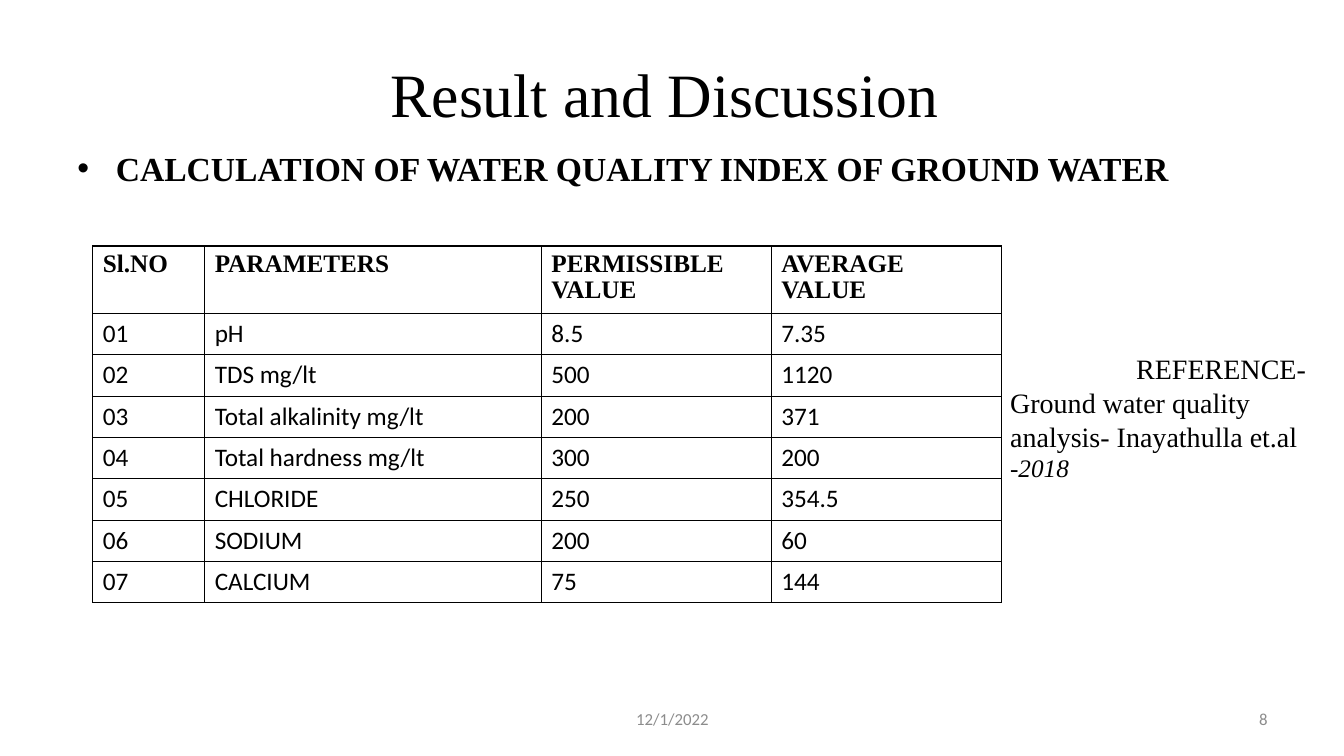
from lxml import etree
from pptx import Presentation
from pptx import util as u
from pptx.dml.color import RGBColor
from pptx.enum import text
from pptx.oxml import ns

HUES = {"ink": "000000", "gray": "8C8C8C"}
SERIF, SANS = "Times New Roman", "Calibri"
COLS = [1.11, 3.34, 2.28, 2.28]
HEAD = ["Sl.NO", "PARAMETERS", "PERMISSIBLE VALUE", "AVERAGE VALUE"]
DATA = [
    ("pH", "8.5", "7.35"),
    ("TDS mg/lt", "500", "1120"),
    ("Total alkalinity mg/lt", "200", "371"),
    ("Total hardness mg/lt", "300", "200"),
    ("CHLORIDE", "250", "354.5"),
    ("SODIUM", "200", "60"),
    ("CALCIUM", "75", "144"),
]


def add_run(para, words, size, face=SERIF, hue="ink", bold=False, slant=False):
    run = para.add_run()
    run.text = words
    font = run.font
    font.size, font.name = u.Pt(size), face
    font.bold, font.italic = bold, slant
    font.color.rgb = RGBColor.from_string(HUES[hue])


def add_box(slide, left, top, width, height, align="LEFT", anchor="TOP"):
    """Add a wrapped text box; return its frame and first paragraph."""
    box = slide.shapes.add_textbox(*map(u.Inches, (left, top, width, height)))
    frame = box.text_frame
    frame.word_wrap = True
    frame.vertical_anchor = getattr(text.MSO_ANCHOR, anchor)
    para = frame.paragraphs[0]
    para.alignment = getattr(text.PP_ALIGN, align)
    return frame, para


def indent(para, left, first, mark=None):
    props = para._p.get_or_add_pPr()
    props.set("marL", str(u.Inches(left)))
    props.set("indent", str(u.Inches(first)))
    if mark:
        etree.SubElement(props, ns.qn("a:buFont"), typeface="Arial")
        etree.SubElement(props, ns.qn("a:buChar"), char=mark)


def add_foot(slide, left, width, align, words):
    para = add_box(slide, left, 6.95, width, 0.4, align, "MIDDLE")[1]
    para.line_spacing = u.Pt(12.4)
    add_run(para, words, 12, SANS, "gray")


def edge(cell):
    props = cell._tc.get_or_add_tcPr()
    for i, side in enumerate(("lnL", "lnR", "lnT", "lnB")):
        line = etree.Element(ns.qn("a:" + side), w=str(u.Pt(1)))
        fill = etree.SubElement(line, ns.qn("a:solidFill"))
        etree.SubElement(fill, ns.qn("a:srgbClr"), val=HUES["ink"])
        props.insert(i, line)


def add_grid(slide):
    rows = [HEAD] + [(f"{n:02}", *row) for n, row in enumerate(DATA, 1)]
    place = map(u.Inches, (0.92, 2.44, sum(COLS), 3.54))
    grid = slide.shapes.add_table(len(rows), len(COLS), *place).table
    grid.first_row = grid.horz_banding = False
    for col, width in zip(grid.columns, COLS):
        col.width = u.Inches(width)
    for r, row in enumerate(rows):
        top = r == 0
        grid.rows[r].height = u.Inches(0.65 if top else 0.41)
        for c, words in enumerate(row):
            cell = grid.cell(r, c)
            cell.fill.background()
            edge(cell)
            para = cell.text_frame.paragraphs[0]
            if top:
                para.line_spacing = 0.95
            add_run(para, words, 18, SERIF if top else SANS, bold=top)


def main():
    deck = Presentation()
    deck.slide_width, deck.slide_height = u.Inches(13.33), u.Inches(7.5)
    slide = deck.slides.add_slide(deck.slide_layouts[6])

    # Title and heading
    para = add_box(slide, 0.67, 0.3, 12, 1.25, "CENTER", "MIDDLE")[1]
    add_run(para, "Result and Discussion ", 44)
    para = add_box(slide, 0.67, 1.42, 12, 5.28)[1]
    para.space_before = u.Pt(4.8)
    indent(para, 0.38, -0.38, "•")
    add_run(para, "CALCULATION OF WATER QUALITY INDEX OF GROUND WATER", 24, bold=True)

    # Footer
    add_foot(slide, 4.56, 4.22, "CENTER", "12/1/2022")
    add_foot(slide, 9.56, 3.11, "RIGHT", "8")

    # Water quality table
    add_grid(slide)

    # Reference, its first line set in from the left
    frame, para = add_box(slide, 9.92, 3.11, 3.21, 2.05)
    frame.margin_top = u.Inches(0.38)
    indent(para, 0, 1.25)
    add_run(para, "REFERENCE- Ground water quality analysis- Inayathulla et.al", 20)
    add_run(para, " -2018", 18, slant=True)

    deck.save("out.pptx")


if __name__ == "__main__":
    main()
